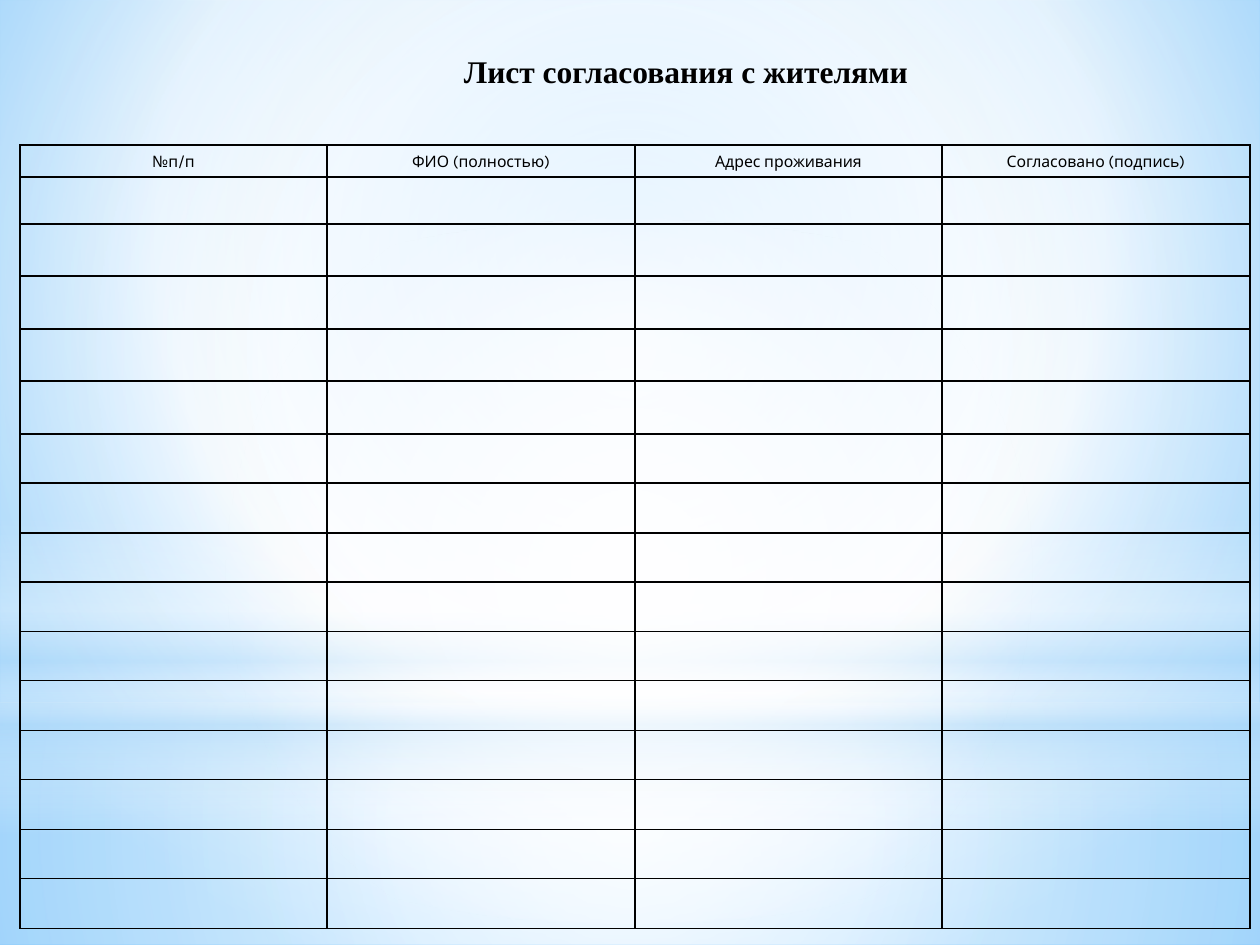
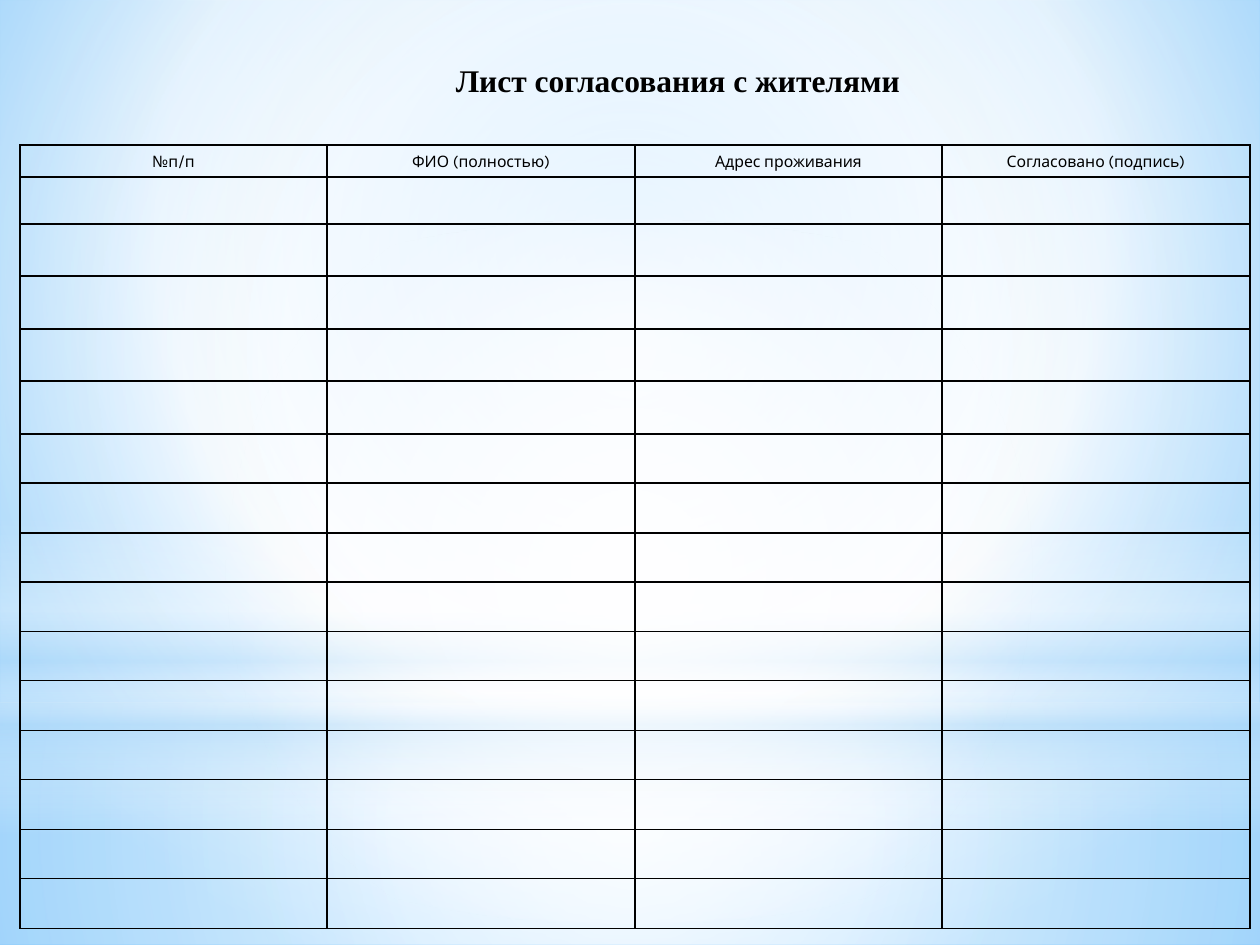
from lxml import etree
from pptx import Presentation
from pptx.dml.color import RGBColor
from pptx.enum.shapes import MSO_SHAPE
from pptx.enum.text import MSO_ANCHOR, MSO_AUTO_SIZE, PP_ALIGN
from pptx.oxml.ns import qn
from pptx.util import Emu, Pt

RECTANGLE, OVAL = MSO_SHAPE.RECTANGLE, MSO_SHAPE.OVAL
TOP, MIDDLE = MSO_ANCHOR.TOP, MSO_ANCHOR.MIDDLE
CENTER = PP_ALIGN.CENTER
NO_AUTOSIZE = MSO_AUTO_SIZE.NONE

# Shared measures and style
EMU_PER_PX = 914400 / 126
SLIDE_SIZE = (1260, 945)
TITLE_ONLY = 5
BLACK, WHITE, SKY = "000000", "FFFFFF", "B4DCFA"
TITLE_FONT, TABLE_FONT = "Times New Roman", "Karla"
MIDPOINT = (50, 50, 50, 50)

# Backdrop: gradient stops are (position %, colour, opacity %)
BACKGROUND_STOPS = [(0, "9ED5FF", 100), (60, WHITE, 100), (100, "5BB9FF", 100)]
BACKGROUND_FOCUS = (20, 10, 20, 60)
BACKDROP = [
    (RECTANGLE, (0, 703, 1260, 242),
     [(0, WHITE, 91), (37, WHITE, 76), (100, SKY, 79)], MIDPOINT),
    (RECTANGLE, (0, 0, 1260, 703),
     [(0, WHITE, 89), (48, WHITE, 62), (100, SKY, 79)], MIDPOINT),
    (RECTANGLE, (0, 519, 1260, 315),
     [(0, WHITE, 0), (29, WHITE, 30), (45, SKY, 40),
      (55, WHITE, 26), (65, SKY, 60), (100, WHITE, 0)], None),
    (OVAL, (0, 220, 1260, 703), [(0, WHITE, 100), (56, WHITE, 0)], MIDPOINT),
]

# Content
TITLE = "Лист согласования с жителями"
TITLE_POSITIONS = [(382, 43), (374, 52)]
TITLE_SIZE = (608, 89)
HEADERS = ["№п/п", "ФИО (полностью)", "Адрес проживания", "Согласовано (подпись)"]
TABLE_ORIGIN = (20, 145)
COLUMN_WIDTHS = [307, 308] * 2
ROW_HEIGHTS = [32, 47] + [52, 53] * 2 + [49, 50] * 5


def px(length):
    return Emu(round(length * EMU_PER_PX))


def color(value):
    return RGBColor.from_string(value)


def set_gradient(fill, owner, stops, focus):
    """Circular gradient towards focus, or a vertical one if focus is None."""
    fill.gradient()
    gradient = next(owner.iter(qn("a:gradFill")))
    for child in list(gradient):
        gradient.remove(child)
    stop_list = etree.SubElement(gradient, qn("a:gsLst"))
    for position, value, opacity in stops:
        stop = etree.SubElement(stop_list, qn("a:gs"), pos=str(position * 1000))
        tone = etree.SubElement(stop, qn("a:srgbClr"), val=value)
        if opacity < 100:
            etree.SubElement(tone, qn("a:alpha"), val=str(opacity * 1000))
    if focus is None:
        etree.SubElement(gradient, qn("a:lin"), ang="5400000", scaled="0")
    else:
        circle = etree.SubElement(gradient, qn("a:path"), path="circle")
        sides = {side: str(value * 1000) for side, value in zip("ltrb", focus)}
        etree.SubElement(circle, qn("a:fillToRect"), sides)


def build_backdrop(master, slide):
    """Draw the soft light on the slide, then move it to the master."""
    common = master.element.cSld
    set_gradient(master.background.fill, common, BACKGROUND_STOPS, BACKGROUND_FOCUS)
    for index, (kind, box, stops, focus) in enumerate(BACKDROP):
        shape = slide.shapes.add_shape(kind, *map(px, box))
        shape.shadow.inherit = False
        shape.line.fill.background()
        set_gradient(shape.fill, shape.element, stops, focus)
        shape.element.nvSpPr.cNvPr.set("id", str(20 + index))
        common.spTree.insert(2 + index, shape.element)


def style_paragraph(paragraph, font_name, size, bold=False):
    paragraph.alignment = CENTER
    font = paragraph.font
    font.name, font.size, font.bold = font_name, Pt(size), bold
    font.color.rgb = color(BLACK)


def add_title(slide, position):
    title = slide.shapes.title
    title.left, title.top = map(px, position)
    title.width, title.height = map(px, TITLE_SIZE)
    frame = title.text_frame
    frame.text = TITLE
    frame.word_wrap = True
    frame.auto_size = NO_AUTOSIZE
    frame.vertical_anchor = TOP
    frame.margin_top = px(9)
    style_paragraph(frame.paragraphs[0], TITLE_FONT, 18, bold=True)


def set_borders(cell):
    properties = cell._tc.get_or_add_tcPr()
    for index, side in enumerate(("lnL", "lnR", "lnT", "lnB")):
        line = etree.Element(qn(f"a:{side}"), w=str(Pt(1)))
        fill = etree.SubElement(line, qn("a:solidFill"))
        etree.SubElement(fill, qn("a:srgbClr"), val=BLACK)
        properties.insert(index, line)


def add_signature_table(slide):
    size = sum(COLUMN_WIDTHS), sum(ROW_HEIGHTS)
    table = slide.shapes.add_table(
        len(ROW_HEIGHTS), len(HEADERS), *map(px, TABLE_ORIGIN + size)).table
    table.first_row = table.horz_banding = False
    for column, width in zip(table.columns, COLUMN_WIDTHS):
        column.width = px(width)
    for row, height in zip(table.rows, ROW_HEIGHTS):
        row.height = px(height)
    for column, header in enumerate(HEADERS):
        table.cell(0, column).text = header
    for cell in table.iter_cells():
        cell.fill.background()
        cell.vertical_anchor = MIDDLE
        cell.margin_left = cell.margin_right = px(6)
        cell.margin_top = cell.margin_bottom = 0
        paragraph = cell.text_frame.paragraphs[0]
        paragraph.line_spacing = 1.15
        style_paragraph(paragraph, TABLE_FONT, 9)
        set_borders(cell)


def main():
    presentation = Presentation()
    presentation.slide_width, presentation.slide_height = map(px, SLIDE_SIZE)
    layout = presentation.slide_layouts[TITLE_ONLY]
    slides = [presentation.slides.add_slide(layout) for _ in TITLE_POSITIONS]
    build_backdrop(presentation.slide_master, slides[0])
    for slide, position in zip(slides, TITLE_POSITIONS):
        add_title(slide, position)
        add_signature_table(slide)
    presentation.save("out.pptx")


if __name__ == "__main__":
    main()
